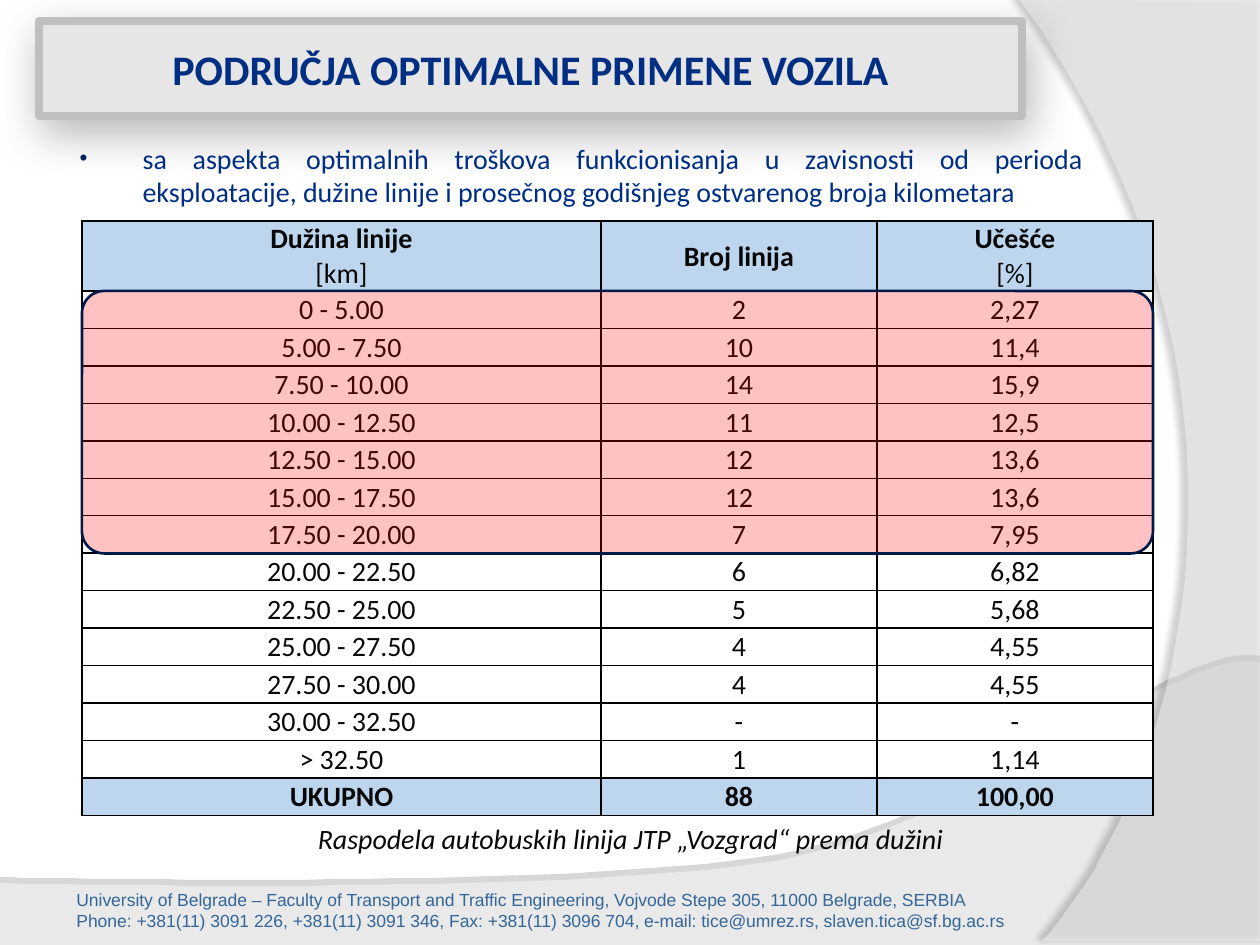
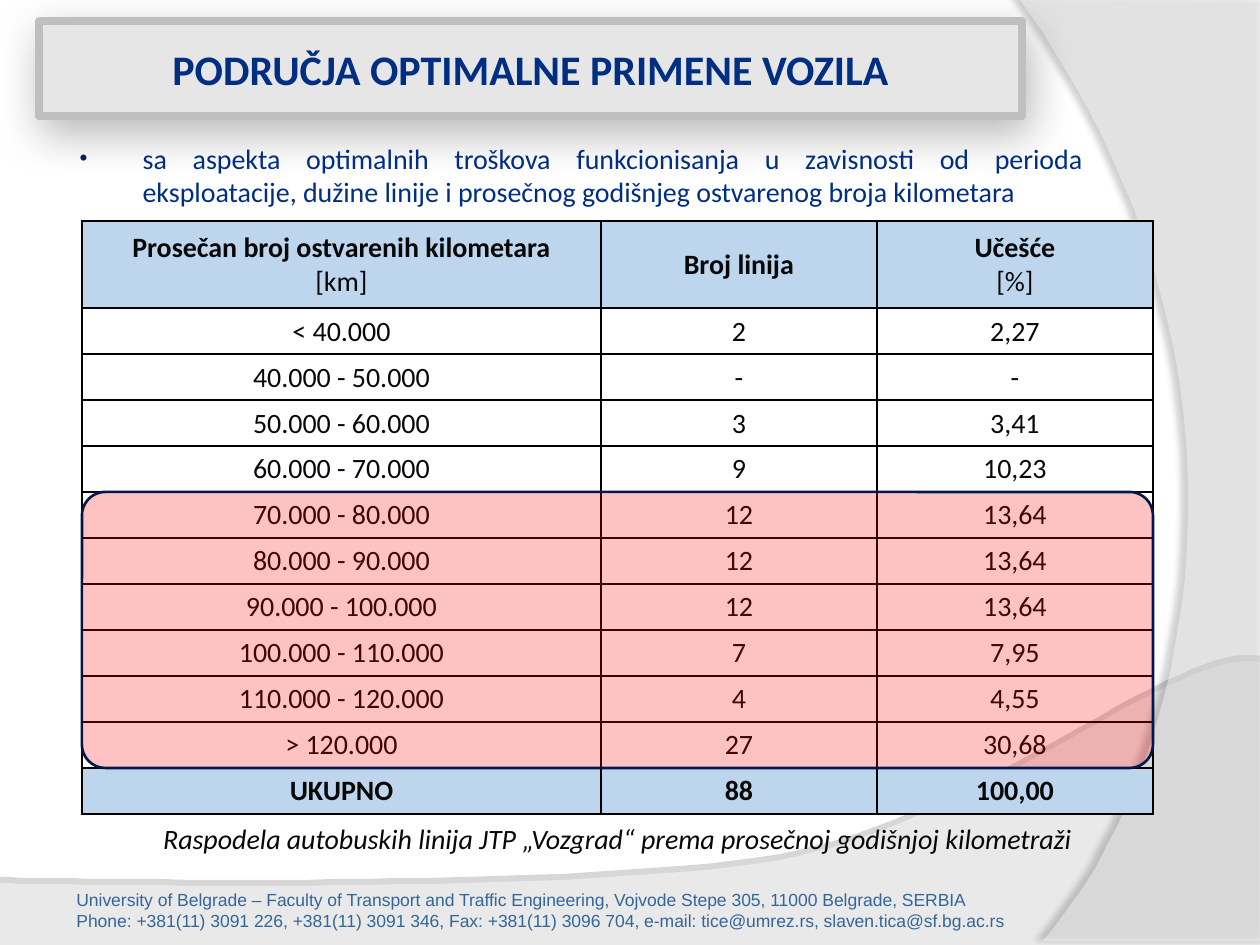
from pptx import Presentation
from pptx.dml.color import RGBColor
from pptx.enum.shapes import MSO_SHAPE
from pptx.enum.text import MSO_ANCHOR, MSO_AUTO_SIZE, PP_ALIGN
from pptx.oxml import parse_xml
from pptx.oxml.ns import nsdecls, qn
from pptx.util import Pt

ROUND_RECT = MSO_SHAPE.ROUNDED_RECTANGLE
MIDDLE = MSO_ANCHOR.MIDDLE
NO_AUTOFIT = MSO_AUTO_SIZE.NONE
LEFT, CENTER, JUSTIFY = PP_ALIGN.LEFT, PP_ALIGN.CENTER, PP_ALIGN.JUSTIFY

WHITE = RGBColor(0xFF, 0xFF, 0xFF)
INK = RGBColor(0x08, 0x08, 0x08)
NAVY = RGBColor(0x00, 0x2E, 0x83)
FOOTER_BLUE = RGBColor(0x33, 0x66, 0x99)
BAND_GREY = RGBColor(0xE6, 0xE6, 0xE6)
BAND_EDGE = RGBColor(0xBF, 0xBF, 0xBF)
HEADER_BLUE = RGBColor(0xBD, 0xD6, 0xEE)
MARK_RED = RGBColor(0xFF, 0x00, 0x00)
MARK_EDGE = RGBColor(0x00, 0x18, 0x47)

EMU_PER_PX = 914400 / 126
SLIDE_W, SLIDE_H = 1260, 945
TABLE_LEFT, TABLE_TOP = 82, 221
COLUMNS = (519, 276, 276)
CAPTION_TOP = 815
CURVE_STEPS = 32

TITLE = "PODRUČJA OPTIMALNE PRIMENE VOZILA"
ASPECT = ("sa aspekta optimalnih troškova funkcionisanja u zavisnosti od perioda "
          "eksploatacije, dužine linije i prosečnog godišnjeg ostvarenog broja kilometara")
FOOTER = (
    "University of Belgrade – Faculty of Transport and Traffic Engineering, "
    "Vojvode Stepe 305, 11000 Belgrade, SERBIA",
    "Phone: +381(11) 3091 226, +381(11) 3091 346, Fax: +381(11) 3096 704, "
    "e-mail: tice@umrez.rs, slaven.tica@sf.bg.ac.rs",
)

# Outlines: a pair is a corner, a triple of pairs is a cubic curve
BOTTOM_WAVE = [(-5, 883), (0, 953), (1260, 953), (1260, 662),
               ((1179, 645), (985, 823), (775, 861)),
               ((563, 897), (-5, 883), (-5, 883))]
RIGHT_WAVE = [(1269, -1), (1269, 941), (1043, 941),
              ((1187, 776), (1292, 374), (1017, -4))]

LENGTH_ROWS = [
    ("Dužina linije\n[km]", "Broj linija", "Učešće\n[%]"),
    ("0 - 5.00", "2", "2,27"),
    ("5.00 - 7.50", "10", "11,4"),
    ("7.50 - 10.00", "14", "15,9"),
    ("10.00 - 12.50", "11", "12,5"),
    ("12.50 - 15.00", "12", "13,6"),
    ("15.00 - 17.50", "12", "13,6"),
    ("17.50 - 20.00", "7", "7,95"),
    ("20.00 - 22.50", "6", "6,82"),
    ("22.50 - 25.00", "5", "5,68"),
    ("25.00 - 27.50", "4", "4,55"),
    ("27.50 - 30.00", "4", "4,55"),
    ("30.00 - 32.50", "-", "-"),
    ("> 32.50", "1", "1,14"),
    ("UKUPNO", "88", "100,00"),
]
MILEAGE_ROWS = [
    ("Prosečan broj ostvarenih kilometara\n[km]", "Broj linija", "Učešće\n[%]"),
    ("< 40.000", "2", "2,27"),
    ("40.000 - 50.000", "-", "-"),
    ("50.000 - 60.000", "3", "3,41"),
    ("60.000 - 70.000", "9", "10,23"),
    ("70.000 - 80.000", "12", "13,64"),
    ("80.000 - 90.000", "12", "13,64"),
    ("90.000 - 100.000", "12", "13,64"),
    ("100.000 - 110.000", "7", "7,95"),
    ("110.000 - 120.000", "4", "4,55"),
    ("> 120.000", "27", "30,68"),
    ("UKUPNO", "88", "100,00"),
]


def px(length):
    return round(length * EMU_PER_PX)


def box(*lengths):
    return [px(length) for length in lengths]


def trace(outline):
    """Turn an outline into straight steps, sampling its curves."""
    points = []
    for part in outline:
        if not isinstance(part[0], tuple):
            points.append(part)
            continue
        start = points[-1]
        for step in range(1, CURVE_STEPS + 1):
            t = step / CURVE_STEPS
            weights = ((1 - t) ** 3, 3 * t * (1 - t) ** 2, 3 * t * t * (1 - t), t ** 3)
            points.append(tuple(sum(w * p[axis] for w, p in zip(weights, (start, *part)))
                                for axis in (0, 1)))
    return points


def set_alpha(shape, percent):
    color = shape.element.spPr.find(qn("a:solidFill"))[0]
    color.append(parse_xml(f'<a:alpha {nsdecls("a")} val="{percent * 1000}"/>'))


def set_shadow(shape, percent, blur, distance, angle):
    shape.shadow.inherit = False
    shape.element.spPr.find(qn("a:effectLst")).append(parse_xml(
        f'<a:outerShdw {nsdecls("a")} blurRad="{Pt(blur)}" dist="{Pt(distance)}" '
        f'dir="{angle * 60000}" algn="ctr" rotWithShape="0"><a:srgbClr val="000000">'
        f'<a:alpha val="{percent * 1000}"/></a:srgbClr></a:outerShdw>'))


class Deck:
    def __init__(self):
        self.prs = Presentation()
        self.prs.slide_width, self.prs.slide_height = box(SLIDE_W, SLIDE_H)
        self.layout = self.prs.slide_layouts[1]
        self.slide = None

    def new_slide(self):
        self.slide = self.prs.slides.add_slide(self.layout)

    def style(self, paragraph, size, color, align=CENTER, bold=False, italic=False,
              font="Calibri"):
        paragraph.alignment = align
        face = paragraph.font
        face.name, face.size, face.bold, face.italic = font, Pt(size), bold, italic
        face.color.rgb = color

    def wave(self, outline, alpha, shadow):
        first, *rest = trace(outline)
        builder = self.slide.shapes.build_freeform(*first, scale=EMU_PER_PX)
        builder.add_line_segments(rest, close=True)
        wave = builder.convert_to_shape()
        wave.fill.solid()
        wave.fill.fore_color.rgb = WHITE
        wave.line.fill.background()
        set_alpha(wave, alpha)
        set_shadow(wave, *shadow)
        return wave

    def text(self, place, lines, size, color, **look):
        frame = self.slide.shapes.add_textbox(*box(*place))
        frame.text_frame.word_wrap = True
        frame.text_frame.text = "\n".join(lines)
        for paragraph in frame.text_frame.paragraphs:
            self.style(paragraph, size, color, **look)
        return frame

    def backdrop(self):
        """Build the shared waves and footer, then hand them to the layout."""
        parts = (self.wave(BOTTOM_WAVE, 45, (35, 0, 3.5, 270)),
                 self.wave(RIGHT_WAVE, 40, (45, 4, 4, 180)),
                 self.text((64, 883, 1176, 55), FOOTER, 10, FOOTER_BLUE,
                           align=LEFT, font="Arial"))
        for order, part in enumerate(parts):
            part.element.xpath(".//p:cNvPr")[0].set("id", str(100 + order))
            self.layout.shapes.element.insert(2 + order, part.element)

    def title(self, text):
        band = self.slide.shapes.title
        band.left, band.top, band.width, band.height = box(39, 21, 983, 95)
        band.element.spPr.insert(1, parse_xml(
            f'<a:prstGeom {nsdecls("a")} prst="roundRect"><a:avLst>'
            '<a:gd name="adj" fmla="val 24600"/></a:avLst></a:prstGeom>'))
        band.fill.solid()
        band.fill.fore_color.rgb = BAND_GREY
        band.line.color.rgb = BAND_EDGE
        band.line.width = Pt(4.5)
        set_shadow(band, 28, 25, 8, 74)
        frame = band.text_frame
        frame.text = text
        frame.auto_size = NO_AUTOFIT
        frame.vertical_anchor = MIDDLE
        frame.margin_left = frame.margin_right = px(6)
        frame.margin_top = frame.margin_bottom = px(6)
        self.style(frame.paragraphs[0], 24, NAVY, bold=True)

    def bullet(self, text):
        body = self.slide.placeholders[1]
        body.left, body.top, body.width, body.height = box(67, 135, 1029, 659)
        body.text_frame.text = text
        body.text_frame.auto_size = NO_AUTOFIT
        paragraph = body.text_frame.paragraphs[0]
        properties = paragraph._p.get_or_add_pPr()
        properties.set("marL", str(px(63)))
        properties.set("indent", str(-px(63)))
        for tag in ('buClr><a:srgbClr val="002060"/></a:buClr', 'buSzPct val="80000"/',
                    'buFont typeface="Arial"/', 'buChar char="•"/'):
            opening = tag.replace("buClr>", f'buClr {nsdecls("a")}>', 1) if ">" in tag \
                else tag.replace(" ", f' {nsdecls("a")} ', 1)
            properties.append(parse_xml(f"<a:{opening.rstrip('>')}>"))
        paragraph.space_before, paragraph.space_after = Pt(0), Pt(6)
        self.style(paragraph, 16, NAVY, JUSTIFY)

    def cell(self, cell, text, fill, bold):
        cell.vertical_anchor = MIDDLE
        cell.margin_left = cell.margin_right = cell.margin_top = px(1)
        cell.margin_bottom = 0
        cell.text_frame.text = text
        for order, paragraph in enumerate(cell.text_frame.paragraphs):
            self.style(paragraph, 16, INK, bold=bold and order == 0)
        properties = cell._tc.get_or_add_tcPr()
        for side in ("lnL", "lnR", "lnT", "lnB"):
            properties.append(parse_xml(
                f'<a:{side} {nsdecls("a")} w="{Pt(1)}"><a:solidFill>'
                f'<a:srgbClr val="000000"/></a:solidFill></a:{side}>'))
        if fill is None:
            cell.fill.background()
        else:
            cell.fill.solid()
            cell.fill.fore_color.rgb = fill

    def table(self, rows, height, header_height, body_fill):
        """Add the table and return the height of a body row in px."""
        row_height = (height - header_height) / (len(rows) - 1)
        table = self.slide.shapes.add_table(
            len(rows), len(COLUMNS),
            *box(TABLE_LEFT, TABLE_TOP, sum(COLUMNS), height)).table
        table.first_row = table.horz_banding = False
        for column, width in zip(table.columns, COLUMNS):
            column.width = px(width)
        for r, values in enumerate(rows):
            strong = r in (0, len(rows) - 1)
            table.rows[r].height = px(row_height if r else header_height)
            for c, value in enumerate(values):
                self.cell(table.cell(r, c), value,
                          HEADER_BLUE if strong else body_fill, strong)
        return row_height

    def highlight(self, top, height):
        mark = self.slide.shapes.add_shape(
            ROUND_RECT, *box(TABLE_LEFT, top, sum(COLUMNS), height))
        mark.adjustments[0] = 0.085
        mark.shadow.inherit = False
        mark.fill.solid()
        mark.fill.fore_color.rgb = MARK_RED
        set_alpha(mark, 24)
        mark.line.color.rgb = MARK_EDGE
        mark.line.width = Pt(1.5)

    def distribution(self, rows, height, header_height, body_fill, marked, caption,
                     caption_left, caption_width):
        """Fill the current slide; marked is the first marked body row and the count."""
        self.title(TITLE)
        self.bullet(ASPECT)
        row_height = self.table(rows, height, header_height, body_fill)
        first, count = marked
        self.highlight(TABLE_TOP + header_height + first * row_height, count * row_height)
        self.text((caption_left, CAPTION_TOP, caption_width, 47), [caption], 16, INK,
                  italic=True)


def main():
    deck = Deck()

    # Lines by length
    deck.new_slide()
    deck.backdrop()
    deck.distribution(LENGTH_ROWS, 595, 70, WHITE, (0, 7),
                      "Raspodela autobuskih linija JTP „Vozgrad“ prema dužini", 160, 941)

    # Lines by yearly mileage
    deck.new_slide()
    deck.distribution(MILEAGE_ROWS, 593, 87, None, (4, 6),
                      "Raspodela autobuskih linija JTP „Vozgrad“ prema prosečnoj "
                      "godišnjoj kilometraži", TABLE_LEFT, sum(COLUMNS))

    deck.prs.save("out.pptx")


if __name__ == "__main__":
    main()
